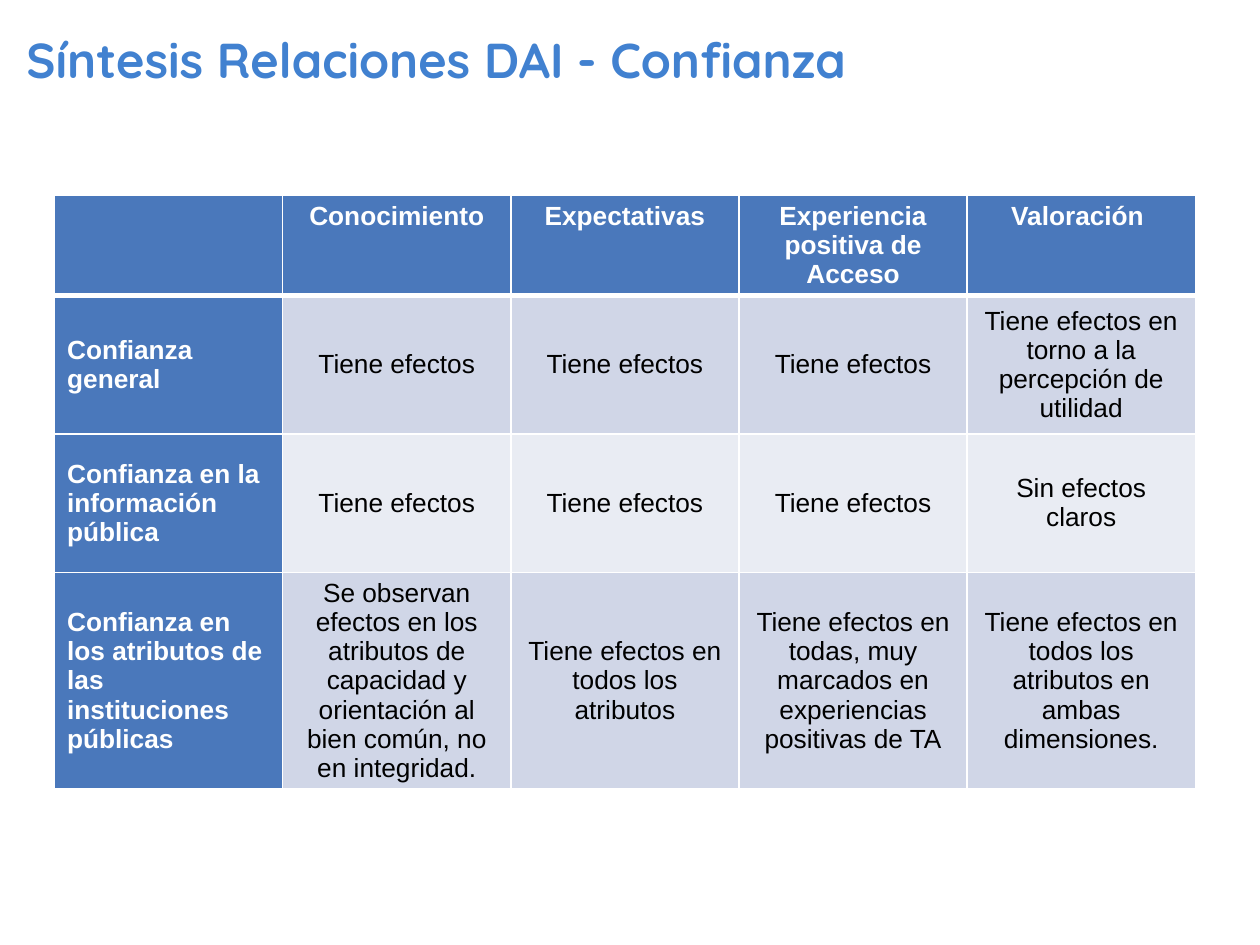
from lxml.etree import SubElement
from pptx import Presentation
from pptx.dml.color import RGBColor
from pptx.enum.text import MSO_ANCHOR, PP_ALIGN
from pptx.oxml.ns import qn
from pptx.util import Cm, Pt

# Content
TITLE = "Síntesis Relaciones DAI - Confianza"
HEADERS = ["", "Conocimiento", "Expectativas", "Experiencia positiva de Acceso",
           "Valoración "]
EFFECTS = "Tiene efectos"
TRUST_ROWS = [
    ["Confianza general", EFFECTS, EFFECTS, EFFECTS,
     "Tiene efectos en torno a la percepción de utilidad"],
    ["Confianza en la información pública", EFFECTS, EFFECTS, EFFECTS,
     "Sin efectos claros"],
    ["Confianza en los atributos de las instituciones públicas",
     "Se observan efectos en los atributos de capacidad y orientación al "
     "bien común, no en integridad.",
     "Tiene efectos en todos los atributos",
     "Tiene efectos en todas, muy marcados en experiencias positivas de TA",
     "Tiene efectos en todos los atributos en ambas dimensiones."],
]

# Format
WHITE, BLACK = "FFFFFF", "000000"
TITLE_BLUE, HEADING_BLUE = "4181D0", "4A78BB"
BANDS = ["D0D6E7", "E9ECF3"]
COLUMN_WIDTH = 4.6
ROW_HEIGHTS = [1.52, 2.79, 2.79, 4.06]


def rgb(value):
    return RGBColor.from_string(value)


def write(frame, text, font="Arial", size=15, color=BLACK, bold=False,
          align=PP_ALIGN.CENTER):
    paragraph = frame.paragraphs[0]
    paragraph.alignment = align
    if not text:
        return
    run = paragraph.add_run()
    run.text = text
    run.font.name = font
    run.font.size = Pt(size)
    run.font.bold = bold
    run.font.color.rgb = rgb(color)


def add_borders(cell, top=1, bottom=1):
    properties = cell._tc.get_or_add_tcPr()
    for side, width in (("L", 1), ("R", 1), ("T", top), ("B", bottom)):
        line = SubElement(properties, qn(f"a:ln{side}"), w=str(Pt(width)))
        fill = SubElement(line, qn("a:solidFill"))
        SubElement(fill, qn("a:srgbClr"), val=WHITE)


presentation = Presentation()
presentation.slide_width, presentation.slide_height = Cm(25.4), Cm(19.05)
slide = presentation.slides.add_slide(presentation.slide_layouts[5])

# Title
title = slide.shapes.title
title.left, title.top, title.width, title.height = Cm(0.28), Cm(0.2), Cm(20.6), Cm(1.98)
title.text_frame.vertical_anchor = MSO_ANCHOR.MIDDLE
write(title.text_frame, TITLE, font="Quicksand", size=28, color=TITLE_BLUE,
      bold=True, align=PP_ALIGN.LEFT)

# Table of effects
rows = [HEADERS] + TRUST_ROWS
table = slide.shapes.add_table(
    len(rows), len(HEADERS), Cm(1.1), Cm(3.94),
    Cm(COLUMN_WIDTH * len(HEADERS)), Cm(sum(ROW_HEIGHTS))).table
table.first_col = True
for column in table.columns:
    column.width = Cm(COLUMN_WIDTH)

for r, (texts, height) in enumerate(zip(rows, ROW_HEIGHTS)):
    table.rows[r].height = Cm(height)
    for c, text in enumerate(texts):
        cell = table.cell(r, c)
        heading = r == 0 or c == 0
        add_borders(cell, top=3 if r == 1 else 1, bottom=3 if r == 0 else 1)
        cell.fill.solid()
        cell.fill.fore_color.rgb = rgb(HEADING_BLUE if heading else BANDS[(r - 1) % 2])
        cell.vertical_anchor = MSO_ANCHOR.TOP if r == 0 else MSO_ANCHOR.MIDDLE
        write(cell.text_frame, text, color=WHITE if heading else BLACK, bold=heading,
              align=PP_ALIGN.LEFT if c == 0 else PP_ALIGN.CENTER)

presentation.save("out.pptx")
